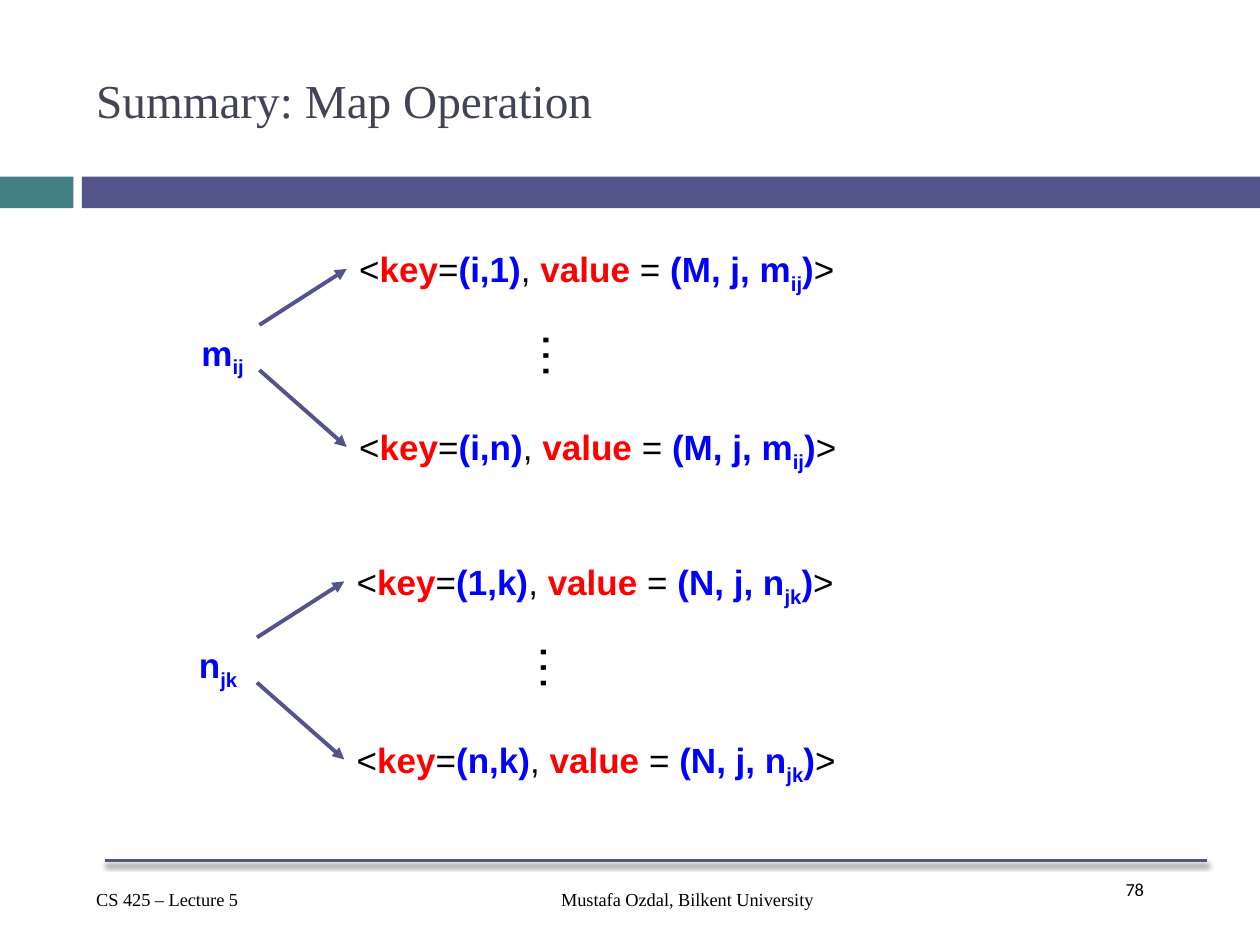
from lxml import etree
from pptx import Presentation
from pptx import util as u
from pptx.dml.color import RGBColor
from pptx.enum import shapes, text
from pptx.oxml.ns import qn

THEME = {
    "teal": "438086", "indigo": "53548A", "title": "424456",
    "black": "000000", "red": "FF0000", "blue": "0000FF",
    "serif": "Times New Roman", "sans": "Arial", "number": "Calibri",
    "title_size": 27, "body_size": 20, "dots_size": 28, "small_size": 10.5,
}

TITLE = "Summary: Map Operation"
COURSE, AUTHOR, PAGE = "CS 425 – Lecture 5", "Mustafa Ozdal, Bilkent University", "78"

# matrix, element, subscript, first key, last key, (left, top) of the element, in cm
MAPS = [
    ("M", "m", "ij", "(i,1)", "(i,n)", (3.81, 6.55)),
    ("N", "n", "jk", "(1,k)", "(n,k)", (3.76, 12.85)),
]
BANDS = [(0, 1.48, "teal"), (1.65, 23.75, "indigo")]  # left, width, colour

LABEL_W, PAIR_W, TEXT_H = 1.42, 10.25, 1.12
PAIR_DX = 3.18
PAIR_DY = (-1.68, 1.91)
ARROW_DY = ((0, -1.13), (0.91, 2.46))  # start and end below the element's top
DOTS = (6.78, -0.1, 1.5, 1.45)


def color(name):
    return RGBColor.from_string(THEME[name])


def add_text(s, box, runs, size="body_size", font="sans", align=None, anchor=None):
    """Runs are (text, colour, bold, subscript) tuples."""
    sp = s.shapes.add_textbox(*map(u.Cm, box))
    tf = sp.text_frame
    tf.word_wrap = True
    if anchor is not None:
        tf.vertical_anchor = anchor
    p = tf.paragraphs[0]
    p.alignment = align
    for content, ink, bold, subscript in runs:
        r = p.add_run()
        r.text = content
        r.font.size = u.Pt(THEME[size])
        r.font.name = THEME[font]
        r.font.bold = bold
        r.font.color.rgb = color(ink)
        if subscript:
            r._r.get_or_add_rPr().set("baseline", "-25000")
    return sp


def add_line(s, start, end, width, arrow=False, shadow=False):
    cx = s.shapes.add_connector(shapes.MSO_CONNECTOR.STRAIGHT,
                                *map(u.Cm, start + end))
    cx.line.color.rgb = color("indigo")
    cx.line.width = u.Pt(width)
    if arrow:
        etree.SubElement(cx.line._get_or_add_ln(), qn("a:tailEnd"), type="triangle")
    effects = etree.SubElement(cx._element.spPr, qn("a:effectLst"))
    if shadow:
        outer = etree.SubElement(effects, qn("a:outerShdw"), blurRad=str(u.Pt(3)),
                                 dist=str(u.Pt(2.4)), dir="5400000", rotWithShape="0")
        ink = etree.SubElement(outer, qn("a:srgbClr"), val=THEME["black"])
        etree.SubElement(ink, qn("a:alpha"), val="45000")


def pair_runs(key, matrix, element, sub):
    return [
        ("<", "black", False, False), ("key", "red", True, False),
        ("=", "black", False, False), (key, "blue", True, False),
        (", ", "black", False, False), ("value", "red", True, False),
        (" = ", "black", False, False), (f"({matrix}, j, {element}", "blue", True, False),
        (sub, "blue", True, True), (")", "blue", True, False),
        (">", "black", False, False),
    ]


def add_frame(s):
    for left, width, fill in BANDS:
        sp = s.shapes.add_shape(shapes.MSO_SHAPE.RECTANGLE, u.Cm(left), u.Cm(3.56),
                                u.Cm(width), u.Cm(0.64))
        sp.shadow.inherit = False
        sp.fill.solid()
        sp.fill.fore_color.rgb = color(fill)
        sp.line.fill.background()
    add_line(s, (2.12, 17.35), (24.34, 17.35), 1.5, shadow=True)
    add_text(s, (1.69, 0.64, 22.65, 2.75), [(TITLE, "title", False, False)],
             "title_size", "serif", anchor=text.MSO_ANCHOR.MIDDLE)
    footers = [
        (PAGE, (22.44, 17.57, 1.9, 1.27), "number", None),
        (COURSE, (1.69, 17.78, 4.66, 0.71), "serif", None),
        (AUTHOR, (6.56, 17.78, 14.6, 0.86), "serif", text.PP_ALIGN.CENTER),
    ]
    for content, box, font, align in footers:
        add_text(s, box, [(content, "black", False, False)], "small_size", font, align)


def add_map(s, matrix, element, sub, first, last, origin):
    """Draw one matrix element and the key-value pairs it maps to."""
    x, y = origin
    add_text(s, (x, y, LABEL_W, TEXT_H),
             [(element, "blue", True, False), (sub, "blue", True, True)])
    for key, pair_dy, (start_dy, end_dy) in zip((first, last), PAIR_DY, ARROW_DY):
        add_text(s, (x + PAIR_DX, y + pair_dy, PAIR_W, TEXT_H),
                 pair_runs(key, matrix, element, sub))
        add_line(s, (x + LABEL_W, y + start_dy), (x + PAIR_DX, y + end_dy),
                 2.25, arrow=True)
    dx, dy, w, h = DOTS
    sp = add_text(s, (x + dx, y + dy, w, h), [("…", "black", False, False)], "dots_size")
    sp.rotation = 90


def main():
    prs = Presentation()
    prs.slide_width, prs.slide_height = u.Cm(25.4), u.Cm(19.05)
    s = prs.slides.add_slide(prs.slide_layouts[6])
    add_frame(s)
    for entry in MAPS:
        add_map(s, *entry)
    prs.save("out.pptx")


if __name__ == "__main__":
    main()
